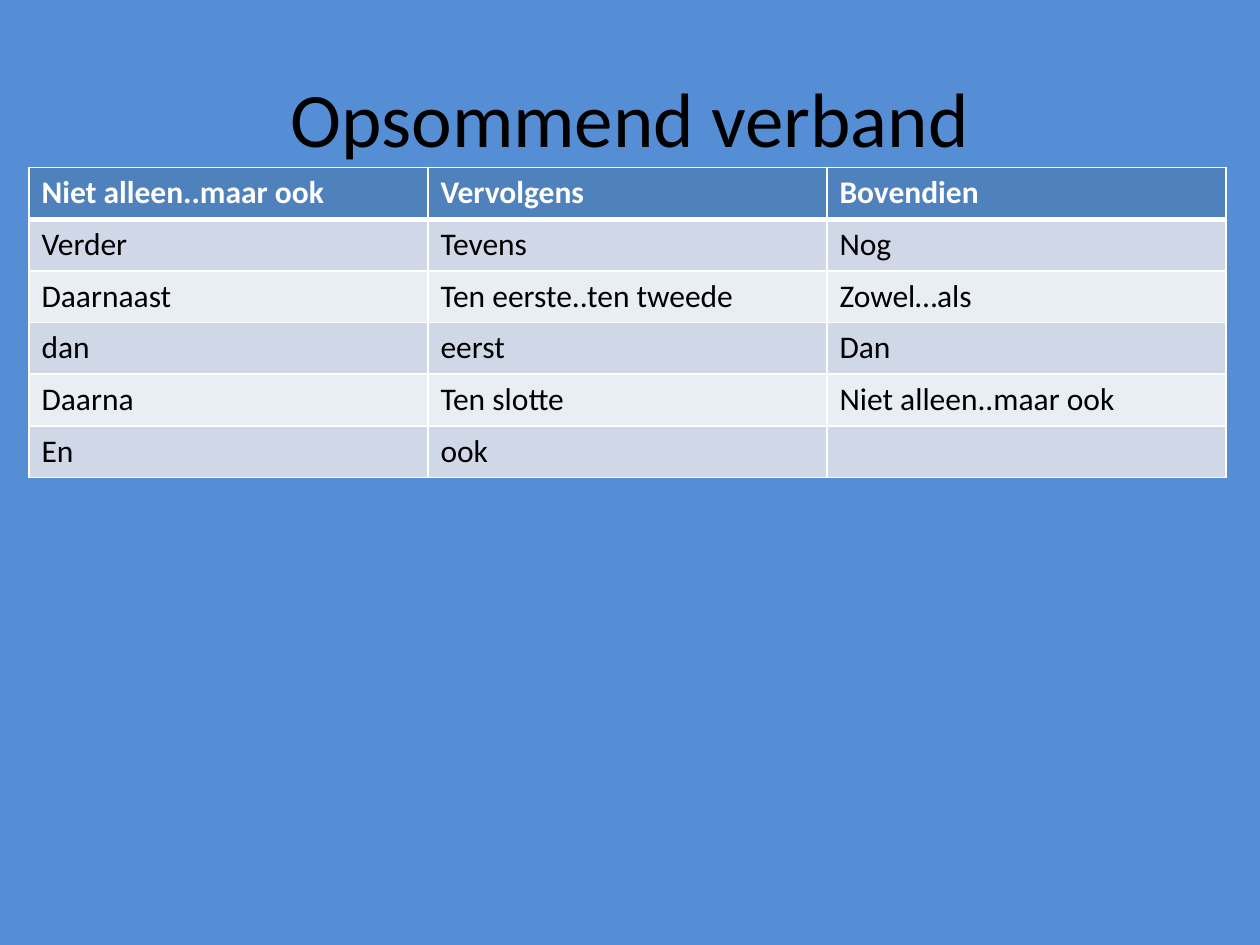
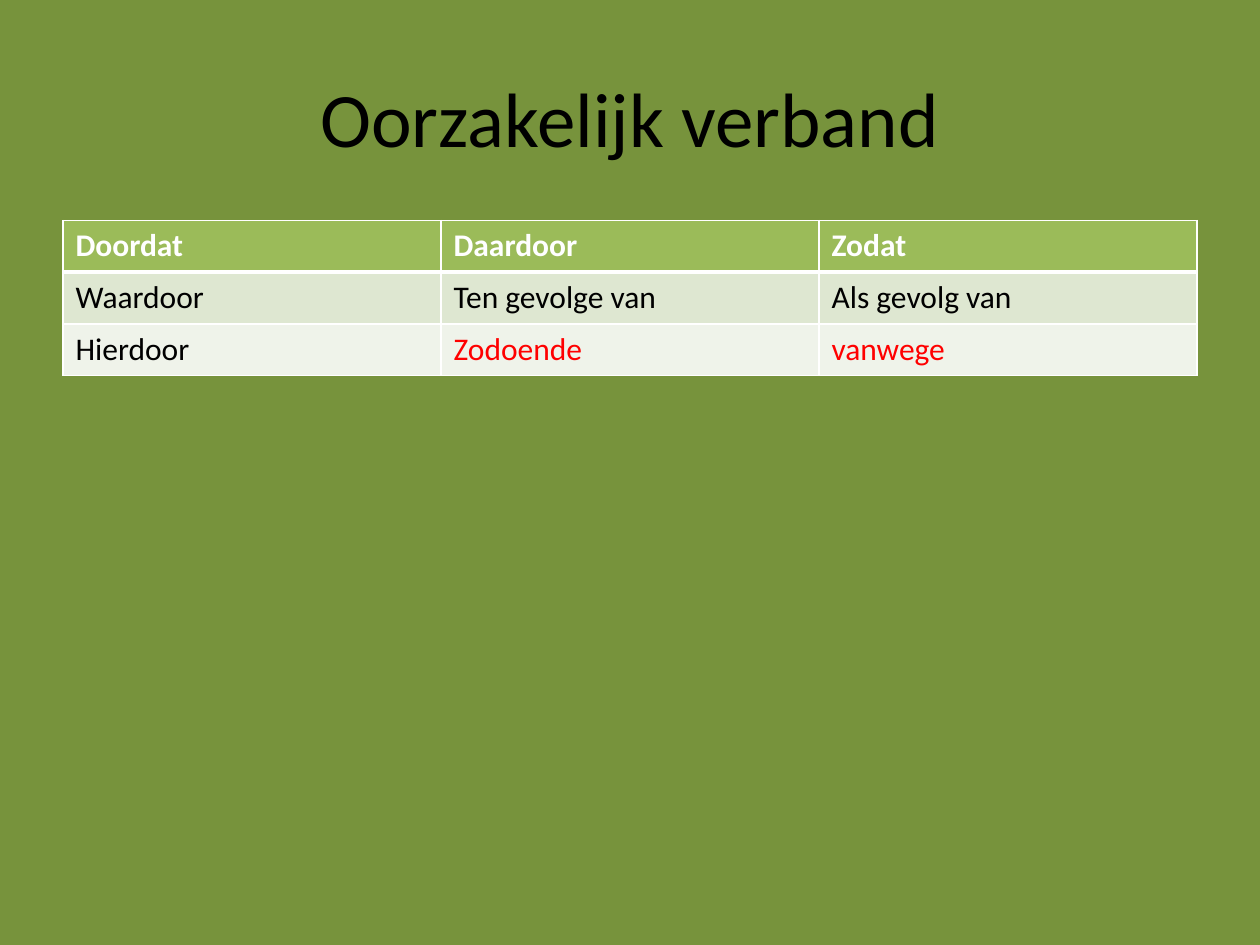
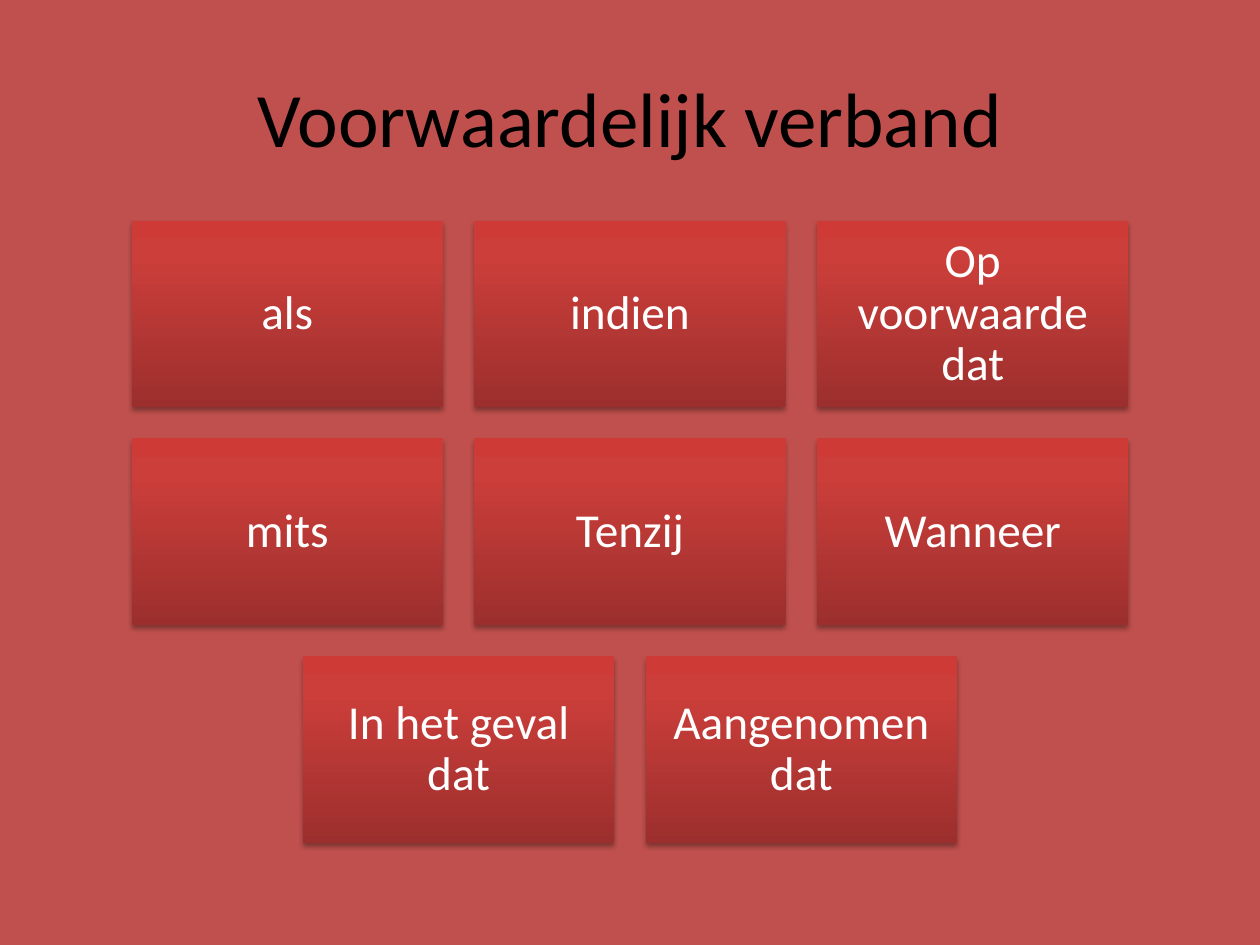
from lxml import etree
from pptx import Presentation
from pptx.dml.color import RGBColor
from pptx.enum.shapes import MSO_SHAPE as Shape
from pptx.enum.text import MSO_ANCHOR as Anchor, PP_ALIGN as Align
from pptx.oxml.ns import qn
from pptx.util import Inches, Pt

# Shared look
FONT = "Calibri"
BLACK = RGBColor(0x00, 0x00, 0x00)
WHITE = RGBColor(0xFF, 0xFF, 0xFF)
RED = RGBColor(0xFF, 0x00, 0x00)
SLIDE_WIDTH, SLIDE_HEIGHT = 10, 7.5
TITLE_ONLY = 5
ROW_HEIGHT = 0.41

# Slide backgrounds
BLUE_BACK = RGBColor(0x55, 0x8E, 0xD5)
GREEN_BACK = RGBColor(0x77, 0x93, 0x3C)
RED_BACK = RGBColor(0xC0, 0x50, 0x4D)

# Table colours: header, odd rows, even rows
BLUE_BANDS = (RGBColor(0x4F, 0x81, 0xBD), RGBColor(0xD0, 0xD8, 0xE8),
              RGBColor(0xE9, 0xED, 0xF4))
GREEN_BANDS = (RGBColor(0x9B, 0xBB, 0x59), RGBColor(0xDE, 0xE7, 0xD1),
               RGBColor(0xEF, 0xF3, 0xEA))

# Tiles: size, gap and gradient from bottom to top
TILE_WIDTH, TILE_HEIGHT, TILE_GAP, TILE_TOP = 2.47, 1.48, 0.25, 1.75
TILE_STOPS = ((0, RGBColor(0x9C, 0x2F, 0x2D)), (80, RGBColor(0xCB, 0x3E, 0x3A)),
              (100, RGBColor(0xCE, 0x3B, 0x37)))

LISTING_WORDS = [
    ["Niet alleen..maar ook", "Vervolgens", "Bovendien"],
    ["Verder", "Tevens", "Nog"],
    ["Daarnaast", "Ten eerste..ten tweede", "Zowel…als"],
    ["dan", "eerst", "Dan"],
    ["Daarna", "Ten slotte", "Niet alleen..maar ook"],
    ["En", "ook", ""],
]
CAUSE_WORDS = [
    ["Doordat", "Daardoor", "Zodat"],
    ["Waardoor", "Ten gevolge van", "Als gevolg van"],
    ["Hierdoor", "Zodoende", "vanwege"],
]
CONDITION_WORDS = [
    ["als", "indien", "Op voorwaarde dat"],
    ["mits", "Tenzij", "Wanneer"],
    ["In het geval dat", "Aangenomen dat"],
]


def add_run(paragraph, text, size, color, bold=False):
    run = paragraph.add_run()
    run.text = text
    run.font.name = FONT
    run.font.size = Pt(size)
    run.font.bold = bold
    run.font.color.rgb = color


def add_titled_slide(presentation, title, background):
    slide = presentation.slides.add_slide(presentation.slide_layouts[TITLE_ONLY])
    slide.background.fill.solid()
    slide.background.fill.fore_color.rgb = background
    shape = slide.shapes.title
    shape.left, shape.top = Inches(0.5), Inches(0.3)
    shape.width, shape.height = Inches(9), Inches(1.25)
    shape.text_frame.vertical_anchor = Anchor.MIDDLE
    paragraph = shape.text_frame.paragraphs[0]
    paragraph.alignment = Align.CENTER
    add_run(paragraph, title, 44, BLACK)
    return slide


def add_color(parent, color, alpha=None):
    element = etree.SubElement(parent, qn("a:srgbClr"), val=str(color))
    if alpha is not None:
        etree.SubElement(element, qn("a:alpha"), val=str(alpha * 1000))


def set_borders(cell, row):
    """White lines, heavier between the header and the body."""
    properties = cell._tc.get_or_add_tcPr()
    heavy_side = {0: "B", 1: "T"}.get(row)
    for side in "LRTB":
        width = Pt(3 if side == heavy_side else 1)
        line = etree.SubElement(properties, qn(f"a:ln{side}"), w=str(width))
        add_color(etree.SubElement(line, qn("a:solidFill")), WHITE)


def add_word_table(slide, words, left, top, width, bands, highlights=()):
    columns = len(words[0])
    table = slide.shapes.add_table(
        len(words), columns, Inches(left), Inches(top),
        Inches(width), Inches(ROW_HEIGHT * len(words))).table
    for column in table.columns:
        column.width = Inches(width / columns)
    for row, row_words in enumerate(words):
        header = row == 0
        for column, word in enumerate(row_words):
            cell = table.cell(row, column)
            set_borders(cell, row)
            cell.fill.solid()
            cell.fill.fore_color.rgb = bands[0 if header else 2 - row % 2]
            color = WHITE if header else RED if word in highlights else BLACK
            if word:
                add_run(cell.text_frame.paragraphs[0], word, 18, color, header)


def set_gradient(shape):
    shape.fill.gradient()
    shape.fill.gradient_angle = 90
    stops = shape._element.spPr.find(".//" + qn("a:gsLst"))
    for stop in list(stops):
        stops.remove(stop)
    for position, color in TILE_STOPS:
        add_color(etree.SubElement(stops, qn("a:gs"), pos=str(position * 1000)), color)


def set_shadow(shape):
    shape.shadow.inherit = False
    effects = shape._element.spPr.find(qn("a:effectLst"))
    shadow = etree.SubElement(
        effects, qn("a:outerShdw"), blurRad=str(Pt(3.1)), dist=str(Pt(1.8)),
        dir=str(90 * 60000), rotWithShape="0")
    add_color(shadow, BLACK, alpha=35)


def add_tile(slide, text, left, top):
    shape = slide.shapes.add_shape(Shape.RECTANGLE, Inches(left), Inches(top),
                                   Inches(TILE_WIDTH), Inches(TILE_HEIGHT))
    set_gradient(shape)
    shape.line.fill.background()
    set_shadow(shape)
    frame = shape.text_frame
    frame.word_wrap = True
    frame.vertical_anchor = Anchor.MIDDLE
    frame.margin_left = frame.margin_right = Inches(0.11)
    frame.margin_top = frame.margin_bottom = Inches(0.11)
    paragraph = frame.paragraphs[0]
    paragraph.alignment = Align.CENTER
    paragraph.line_spacing = 0.9
    add_run(paragraph, text, 27, WHITE)


def add_tile_rows(slide, rows):
    """Rows of tiles, each row centred on the slide."""
    for row, words in enumerate(rows):
        row_width = len(words) * (TILE_WIDTH + TILE_GAP) - TILE_GAP
        left = (SLIDE_WIDTH - row_width) / 2
        top = TILE_TOP + row * (TILE_HEIGHT + TILE_GAP)
        for column, word in enumerate(words):
            add_tile(slide, word, left + column * (TILE_WIDTH + TILE_GAP), top)


def main():
    presentation = Presentation()
    presentation.slide_width = Inches(SLIDE_WIDTH)
    presentation.slide_height = Inches(SLIDE_HEIGHT)

    # Listing words
    slide = add_titled_slide(presentation, "Opsommend verband", BLUE_BACK)
    add_word_table(slide, LISTING_WORDS, 0.23, 1.33, 9.5, BLUE_BANDS)

    # Cause words
    slide = add_titled_slide(presentation, "Oorzakelijk verband", GREEN_BACK)
    add_word_table(slide, CAUSE_WORDS, 0.5, 1.75, 9, GREEN_BANDS,
                   highlights=("Zodoende", "vanwege"))

    # Condition words
    slide = add_titled_slide(presentation, "Voorwaardelijk verband", RED_BACK)
    add_tile_rows(slide, CONDITION_WORDS)

    presentation.save("out.pptx")


if __name__ == "__main__":
    main()
